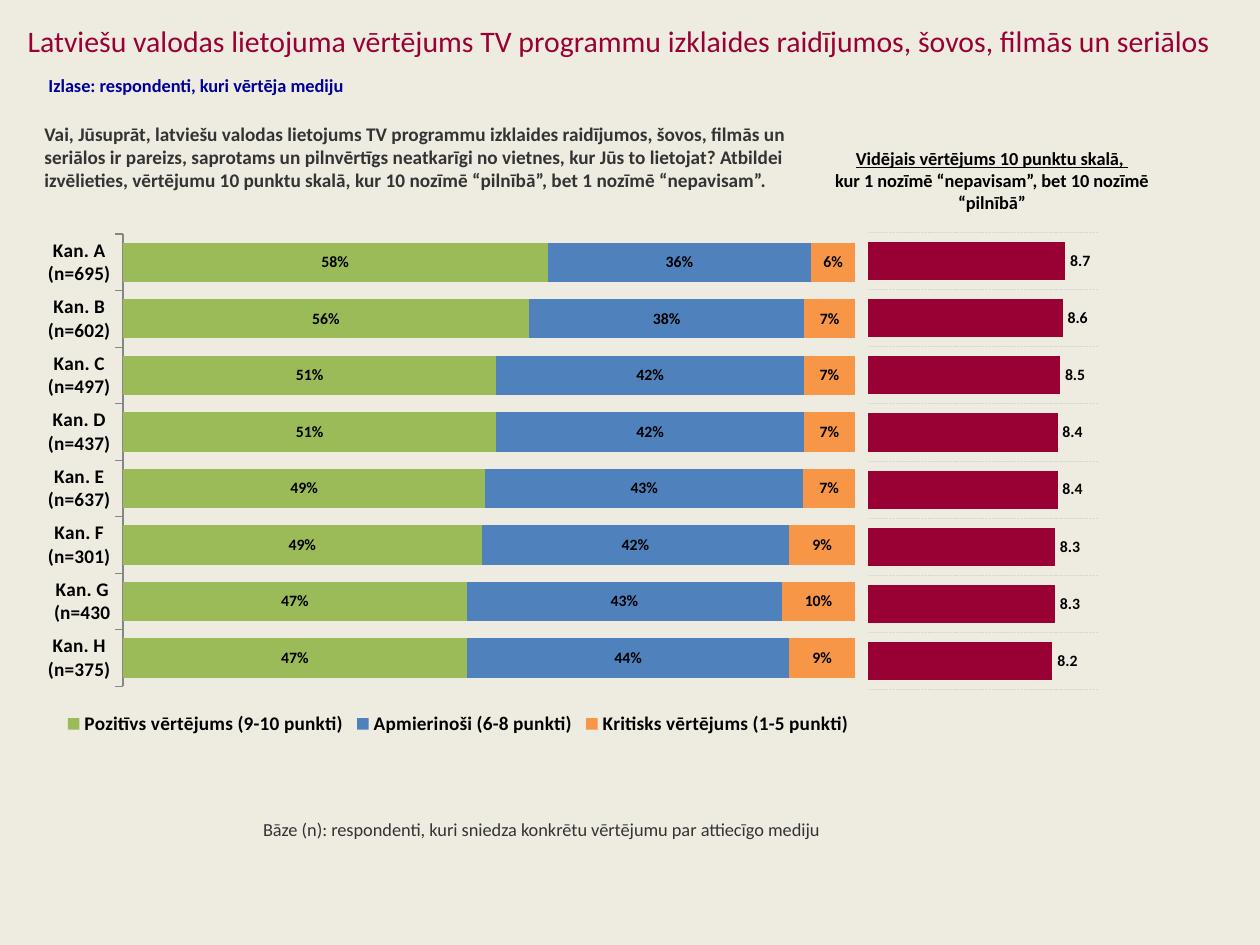
from lxml import etree
from pptx import Presentation
from pptx.chart.data import CategoryChartData
from pptx.dml.color import RGBColor
from pptx.enum import chart as charts, dml, text
from pptx.oxml.ns import qn
from pptx.util import Pt

PX = 914400 // 126
FONT = "Calibri"
COLORS = {
    "background": "EEECE1", "title": "990033", "question": "333333",
    "sample": "000099", "black": "000000", "grid": "D9D9D9", "axis": "868686",
    "positive": "9BBB59", "satisfactory": "4F81BD", "critical": "F79646",
    "mean": "990033",
}

# Channel, respondents label, positive, satisfactory, critical, mean score
RATINGS = [
    ("Kan. H", "(n=375)", 0.47, 0.44, 0.09, 8.2),
    ("Kan. G", "(n=430", 0.47, 0.43, 0.10, 8.3),
    ("Kan. F", "(n=301)", 0.49, 0.42, 0.09, 8.3),
    ("Kan. E", "(n=637)", 0.49, 0.43, 0.07, 8.4),
    ("Kan. D", "(n=437)", 0.51, 0.42, 0.07, 8.4),
    ("Kan. C", "(n=497)", 0.51, 0.42, 0.07, 8.5),
    ("Kan. B", "(n=602)", 0.56, 0.38, 0.07, 8.6),
    ("Kan. A", "(n=695)", 0.58, 0.36, 0.06, 8.7),
]
CHANNELS, BASES, POSITIVE, SATISFACTORY, CRITICAL, MEANS = zip(*RATINGS)


def rgb(name):
    return RGBColor.from_string(COLORS[name])


def emu(box):
    return [length * PX for length in box]


def style_font(font, size, color="black", bold=False, underline=False):
    font.name, font.size, font.bold = FONT, Pt(size), bold
    font.underline = underline
    font.color.rgb = rgb(color)


def write(frame, *lines, size, color, bold=False, align="LEFT", anchor="TOP",
          underlined=(), inset=None):
    """Fill a text frame, one paragraph a line; underlined holds line numbers."""
    frame.word_wrap = True
    frame.auto_size = text.MSO_AUTO_SIZE.NONE
    frame.vertical_anchor = text.MSO_ANCHOR[anchor]
    if inset is not None:
        frame.margin_left = frame.margin_right = inset
        frame.margin_top = frame.margin_bottom = inset
    for number, line in enumerate(lines):
        paragraph = frame.add_paragraph() if number else frame.paragraphs[0]
        paragraph.alignment = text.PP_ALIGN[align]
        run = paragraph.add_run()
        run.text = line
        style_font(run.font, size, color, bold, number in underlined)


def add_text(slide, box, *lines, **format):
    write(slide.shapes.add_textbox(*emu(box)).text_frame, *lines, **format)


def set_layout(parent, position, x, y, w, h, inner=False):
    """Give a plot area or legend a manual layout in fractions of the chart."""
    for old in parent.findall(qn("c:layout")):
        parent.remove(old)
    layout = etree.Element(qn("c:layout"))
    manual = etree.SubElement(layout, qn("c:manualLayout"))
    settings = [("layoutTarget", "inner")] if inner else []
    settings += [("xMode", "edge"), ("yMode", "edge"),
                 ("x", x), ("y", y), ("w", w), ("h", h)]
    for tag, value in settings:
        etree.SubElement(manual, qn(f"c:{tag}")).set("val", str(value))
    parent.insert(position, layout)


def add_bars(slide, box, kind, categories, series, number_format, gap, plot_box,
             label_position, limits):
    """Add a bar chart; series holds (name, values, colour)."""
    data = CategoryChartData(number_format=number_format)
    data.categories = categories
    for name, values, _ in series:
        data.add_series(name, values)
    chart = slide.shapes.add_chart(kind, *emu(box), data).chart
    chart.has_title = chart.has_legend = False
    style_font(chart.font, 9)
    axis = chart.value_axis
    axis.visible = axis.has_major_gridlines = False
    axis.minimum_scale, axis.maximum_scale = limits
    plot = chart.plots[0]
    plot.gap_width = gap
    plot.vary_by_categories = False
    for bars, (_, _, color) in zip(plot.series, series):
        bars.format.fill.solid()
        bars.format.fill.fore_color.rgb = rgb(color)
        labels = bars.data_labels
        labels.show_value = True
        labels.number_format = number_format
        labels.number_format_is_linked = False
        labels.position = label_position
        style_font(labels.font, 9, bold=True)
    set_layout(chart.element.chart.plotArea, 0, *plot_box, inner=True)
    return chart


def add_shares(slide, box):
    series = [
        ("Pozitīvs vērtējums (9-10 punkti)", POSITIVE, "positive"),
        ("Apmierinoši (6-8 punkti)", SATISFACTORY, "satisfactory"),
        ("Kritisks vērtējums (1-5 punkti)", CRITICAL, "critical"),
    ]
    names = [f"{channel} {base}" for channel, base in zip(CHANNELS, BASES)]
    chart = add_bars(slide, box, charts.XL_CHART_TYPE.BAR_STACKED_100, names,
                     series, "0%", 44, (0.106, 0.054, 0.893, 0.809),
                     charts.XL_LABEL_POSITION.CENTER, (0, 1))
    chart.plots[0].overlap = 100
    axis = chart.category_axis
    axis.major_tick_mark = charts.XL_TICK_MARK.OUTSIDE
    axis.format.line.color.rgb = rgb("axis")
    style_font(axis.tick_labels.font, 11, bold=True)
    chart.has_legend = True
    legend = chart.legend
    legend.position = charts.XL_LEGEND_POSITION.TOP
    legend.include_in_layout = False
    style_font(legend.font, 11, bold=True)
    set_layout(legend._element, 1, 0.03, 0.9, 0.97, 0.06)


def add_means(slide, box):
    chart = add_bars(slide, box, charts.XL_CHART_TYPE.BAR_CLUSTERED,
                     [str(n + 1) for n in range(len(MEANS))],
                     [("Vidējais vērtējums", MEANS, "mean")], "0.0", 50,
                     (0.05, 0.018, 0.924, 0.963),
                     charts.XL_LABEL_POSITION.OUTSIDE_END, (1, 10))
    chart.value_axis.major_unit = 3
    axis = chart.category_axis
    axis.visible = False
    axis.has_major_gridlines = True
    line = axis.major_gridlines.format.line
    line.color.rgb = rgb("grid")
    line.width = Pt(0.5)
    line.dash_style = dml.MSO_LINE.SQUARE_DOT


def add_heading(slide, box):
    title = slide.shapes.title
    title.left, title.top, title.width, title.height = emu(box)
    write(title.text_frame,
          "Latviešu valodas lietojuma vērtējums TV programmu izklaides "
          "raidījumos, šovos, filmās un seriālos", size=17, color="title")


def add_notes_on_survey(slide):
    add_text(slide, (36, 68, 348, 35), "Izlase: respondenti, kuri vērtēja mediju",
             size=10.5, color="sample", bold=True)
    add_text(slide, (32, 116, 767, 106),
             "Vai, Jūsuprāt, latviešu valodas lietojums TV programmu izklaides "
             "raidījumos, šovos, filmās un seriālos ir pareizs, saprotams un "
             "pilnvērtīgs neatkarīgi no vietnes, kur Jūs to lietojat? Atbildei "
             "izvēlieties, vērtējumu 10 punktu skalā, kur 10 nozīmē “pilnībā”, "
             "bet 1 nozīmē “nepavisam”.", size=11, color="question", bold=True)
    add_text(slide, (818, 141, 348, 79), "Vidējais vērtējums 10 punktu skalā, ",
             "kur 1 nozīmē “nepavisam”, bet 10 nozīmē “pilnībā”",
             size=10.5, color="black", bold=True, align="CENTER", underlined=(0,))
    add_text(slide, (263, 805, 586, 35),
             "Bāze (n): respondenti, kuri sniedza konkrētu vērtējumu par "
             "attiecīgo mediju", size=10.5, color="question", anchor="BOTTOM",
             inset=0)


def main():
    deck = Presentation()
    deck.slide_width, deck.slide_height = emu((1260, 945))
    slide = deck.slides.add_slide(deck.slide_layouts[5])
    slide.background.fill.solid()
    slide.background.fill.fore_color.rgb = rgb("background")
    add_heading(slide, (15, 16, 1230, 63))
    add_notes_on_survey(slide)
    add_means(slide, (856, 224, 249, 475))
    add_shares(slide, (36, 204, 820, 559))
    deck.save("out.pptx")


if __name__ == "__main__":
    main()
